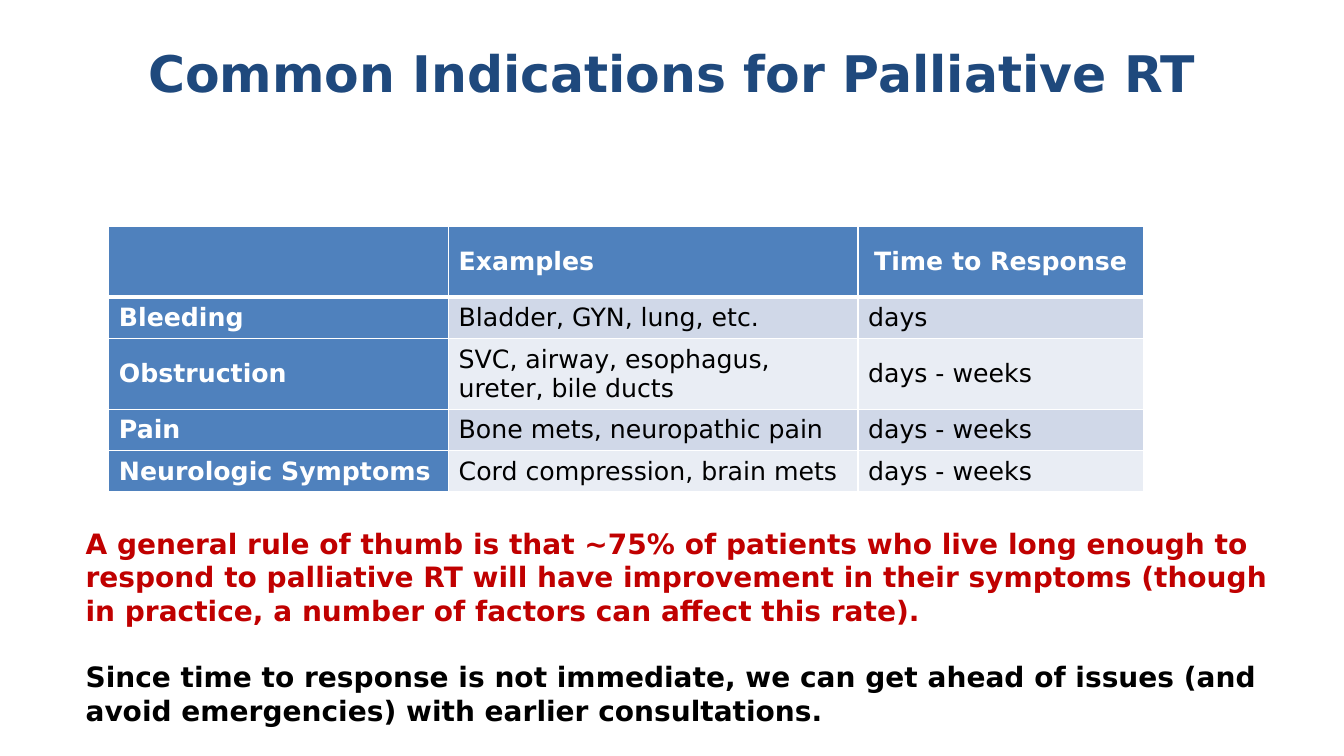
from dataclasses import dataclass

from lxml import etree
from pptx import Presentation
from pptx import util as u
from pptx.dml.color import RGBColor
from pptx.enum import text
from pptx.oxml.ns import qn

FONT = "DejaVu Sans"
WHITE = RGBColor(0xFF, 0xFF, 0xFF)
BLACK = RGBColor(0x00, 0x00, 0x00)
NAVY = RGBColor(0x1F, 0x49, 0x7D)
RED = RGBColor(0xC0, 0x00, 0x00)
BLUE = RGBColor(0x4F, 0x81, 0xBD)
BANDS = (RGBColor(0xD0, 0xD8, 0xE8), RGBColor(0xE9, 0xED, 0xF4))

SLIDE_WIDTH = u.Inches(13.33)
SLIDE_HEIGHT = u.Inches(7.5)
COLUMN_SHARES = (25.28, 30.46, 21.23)
HEADER_SHARE = 9.33
BODY_SHARE = 5.47


@dataclass(frozen=True)
class Area:
    left: float
    top: float
    width: float
    height: float


@dataclass(frozen=True)
class Statement:
    wording: str
    color: RGBColor
    size: int
    align: text.PP_ALIGN = text.PP_ALIGN.LEFT
    space_before: float = 0


@dataclass(frozen=True)
class Indication:
    symptom: str
    examples: str
    response: str


TITLE_AREA = Area(0, 0.13, 100, 18.8)
TABLE_AREA = Area(8.1, 30, sum(COLUMN_SHARES), HEADER_SHARE + 4 * BODY_SHARE)
ADVICE_AREA = Area(5.63, 68.93, 90.77, 28.27)

TITLE = Statement("Common Indications for Palliative RT", NAVY, 36, text.PP_ALIGN.CENTER)
ADVICE = (
    Statement(
        "A general rule of thumb is that ~75% of patients who live long enough to "
        "respond to palliative RT will have improvement in their symptoms (though "
        "in practice, a number of factors can affect this rate).",
        RED, 20,
    ),
    Statement(
        "Since time to response is not immediate, we can get ahead of issues (and "
        "avoid emergencies) with earlier consultations.",
        BLACK, 20, space_before=23.5,
    ),
)
INDICATIONS = (
    Indication("", "Examples", "Time to Response"),
    Indication("Bleeding", "Bladder, GYN, lung, etc.", "days"),
    Indication("Obstruction", "SVC, airway, esophagus,\nureter, bile ducts", "days - weeks"),
    Indication("Pain", "Bone mets, neuropathic pain", "days - weeks"),
    Indication("Neurologic Symptoms", "Cord compression, brain mets", "days - weeks"),
)


def across(percent: float) -> int:
    return round(SLIDE_WIDTH * percent / 100)


def down(percent: float) -> int:
    return round(SLIDE_HEIGHT * percent / 100)


def place(area: Area) -> tuple[int, int, int, int]:
    return across(area.left), down(area.top), across(area.width), down(area.height)


def style(paragraph, size: int, color: RGBColor, bold: bool) -> None:
    for run in paragraph.runs:
        run.font.name = FONT
        run.font.size = u.Pt(size)
        run.font.bold = bold
        run.font.color.rgb = color


def draw_statements(slide, area: Area, statements: tuple[Statement, ...],
                    anchor: text.MSO_ANCHOR) -> None:
    frame = slide.shapes.add_textbox(*place(area)).text_frame
    frame.word_wrap = True
    frame.vertical_anchor = anchor
    frame.text = "\n".join(statement.wording for statement in statements)
    for paragraph, statement in zip(frame.paragraphs, statements):
        paragraph.alignment = statement.align
        if statement.space_before:
            paragraph.space_before = u.Pt(statement.space_before)
        style(paragraph, statement.size, statement.color, True)


def rule_cell(cell, top: int, bottom: int) -> None:
    properties = cell._tc.get_or_add_tcPr()
    for side, points in (("L", 1), ("R", 1), ("T", top), ("B", bottom)):
        line = etree.SubElement(properties, qn(f"a:ln{side}"), w=str(u.Pt(points)))
        fill = etree.SubElement(line, qn("a:solidFill"))
        etree.SubElement(fill, qn("a:srgbClr"), val=str(WHITE))


def draw_indications(slide) -> None:
    table = slide.shapes.add_table(
        len(INDICATIONS), len(COLUMN_SHARES), *place(TABLE_AREA)
    ).table
    for column, share in zip(table.columns, COLUMN_SHARES):
        column.width = across(share)
    for r, indication in enumerate(INDICATIONS):
        table.rows[r].height = down(BODY_SHARE if r else HEADER_SHARE)
        entries = (indication.symptom, indication.examples, indication.response)
        for c, entry in enumerate(entries):
            heading = r == 0 or c == 0
            cell = table.cell(r, c)
            rule_cell(cell, 3 if r == 1 else 1, 3 if r == 0 else 1)
            cell.fill.solid()
            cell.fill.fore_color.rgb = BLUE if heading else BANDS[(r - 1) % 2]
            cell.vertical_anchor = text.MSO_ANCHOR.MIDDLE
            cell.text_frame.text = entry
            for paragraph in cell.text_frame.paragraphs:
                centred = r == 0 and c == 2
                paragraph.alignment = text.PP_ALIGN.CENTER if centred else text.PP_ALIGN.LEFT
                style(paragraph, 18, WHITE if heading else BLACK, heading)


def main() -> None:
    deck = Presentation()
    deck.slide_width = SLIDE_WIDTH
    deck.slide_height = SLIDE_HEIGHT
    slide = deck.slides.add_slide(deck.slide_layouts[6])
    draw_statements(slide, TITLE_AREA, (TITLE,), text.MSO_ANCHOR.MIDDLE)
    draw_indications(slide)
    draw_statements(slide, ADVICE_AREA, ADVICE, text.MSO_ANCHOR.TOP)
    deck.save("out.pptx")


if __name__ == "__main__":
    main()
